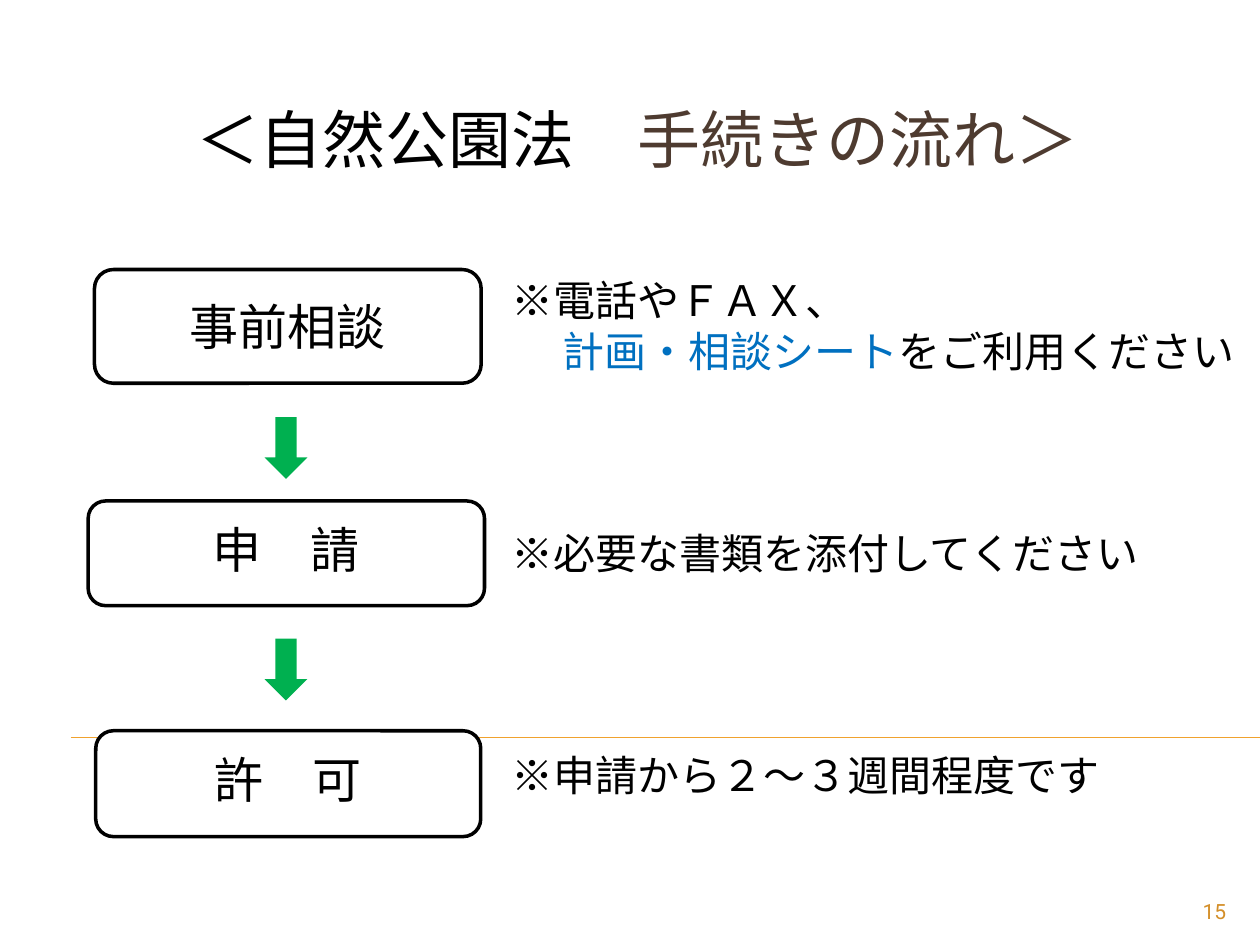
from lxml import etree
from pptx import Presentation
from pptx import util as u
from pptx.dml.color import RGBColor
from pptx.enum import shapes, text
from pptx.oxml import ns

BLACK = RGBColor(0x00, 0x00, 0x00)
WHITE = RGBColor(0xFF, 0xFF, 0xFF)
BROWN = RGBColor(0x4E, 0x3B, 0x30)
BLUE = RGBColor(0x00, 0x70, 0xC0)
GREEN = RGBColor(0x00, 0xB0, 0x50)
ORANGE = RGBColor(0xF0, 0xA2, 0x2E)
OCHRE = RGBColor(0xD4, 0x8F, 0x29)
LEFT, CENTER, RIGHT = text.PP_ALIGN.LEFT, text.PP_ALIGN.CENTER, text.PP_ALIGN.RIGHT


class FlowSlide:
    font = "Roboto"
    step_size = 28
    note_size = 24
    note_left = 285

    def __init__(self, prs):
        self.s = prs.slides.add_slide(prs.slide_layouts[6])

    def rule(self, x1, x2, y):
        c = self.s.shapes.add_connector(
            shapes.MSO_CONNECTOR.STRAIGHT, u.Pt(x1), u.Pt(y), u.Pt(x2), u.Pt(y))
        c.line.color.rgb = ORANGE
        c.line.width = u.Pt(0.75)
        etree.SubElement(c._element.spPr, ns.qn("a:effectLst"))

    def shape(self, kind, box, fill):
        sp = self.s.shapes.add_shape(kind, *map(u.Pt, box))
        sp.shadow.inherit = False
        sp.fill.solid()
        sp.fill.fore_color.rgb = fill
        sp.line.fill.background()
        return sp

    def box(self, *box):
        sp = self.shape(shapes.MSO_SHAPE.ROUNDED_RECTANGLE, box, WHITE)
        sp.line.color.rgb = BLACK
        sp.line.width = u.Pt(2)
        return sp

    def arrow(self, top):
        self.shape(shapes.MSO_SHAPE.DOWN_ARROW, (151.2, top, 24.5, 35.3), GREEN)

    def paragraph(self, p, runs, size, align=LEFT, indent=0):
        p.alignment = align
        p.font.name = self.font
        p.font.size = u.Pt(size)
        if indent:
            p._p.get_or_add_pPr().set("marL", str(u.Pt(indent)))
        for words, color in runs:
            r = p.add_run()
            r.text = words
            r.font.color.rgb = color

    def label(self, sp, words):
        sp.text_frame.vertical_anchor = text.MSO_ANCHOR.MIDDLE
        self.paragraph(sp.text_frame.paragraphs[0], [(words, BLACK)],
                       self.step_size, CENTER)

    def text(self, box, runs, size, align=LEFT, wrap=True):
        tf = self.s.shapes.add_textbox(*map(u.Pt, box)).text_frame
        tf.word_wrap = wrap
        self.paragraph(tf.paragraphs[0], runs, size, align)
        return tf

    def note(self, top, width, height, words):
        return self.text((self.note_left, top, width, height),
                         [(words, BLACK)], self.note_size)

    def step(self, box, words):
        self.box(*box)
        left, top, width, _ = box
        self.text((left, top + 7.2, width, 59), [(words, BLACK)], self.step_size, CENTER)


def main():
    prs = Presentation()
    prs.slide_width, prs.slide_height = u.Pt(720), u.Pt(540)
    s = FlowSlide(prs)

    s.rule(40.5, 720, 421.4)
    s.text((105, 54, 523.5, 51),
           [("＜自然公園法", BLACK), ("　手続きの流れ＞", BROWN)], 36, wrap=False)

    s.label(s.box(54, 154, 221, 65), "事前相談")
    tf = s.note(153.4, 449.3, 65.5, "※電話やＦＡＸ、")
    s.paragraph(tf.add_paragraph(),
                [("計画・相談シート", BLUE), ("をご利用ください", BLACK)],
                s.note_size, indent=29.5)

    s.step((50.4, 286.3, 226.5, 59.8), "申　請")
    s.note(298, 446.4, 36, "※必要な書類を添付してください")

    s.step((54.7, 417.6, 220, 60.5), "許　可")
    s.note(425, 459.4, 36, "※申請から２～３週間程度です")

    for top in (238.3, 365):
        s.arrow(top)

    s.text((648, 509.8, 59.8, 19.4), [("15", OCHRE)], 12, RIGHT)
    prs.save("out.pptx")


if __name__ == "__main__":
    main()
